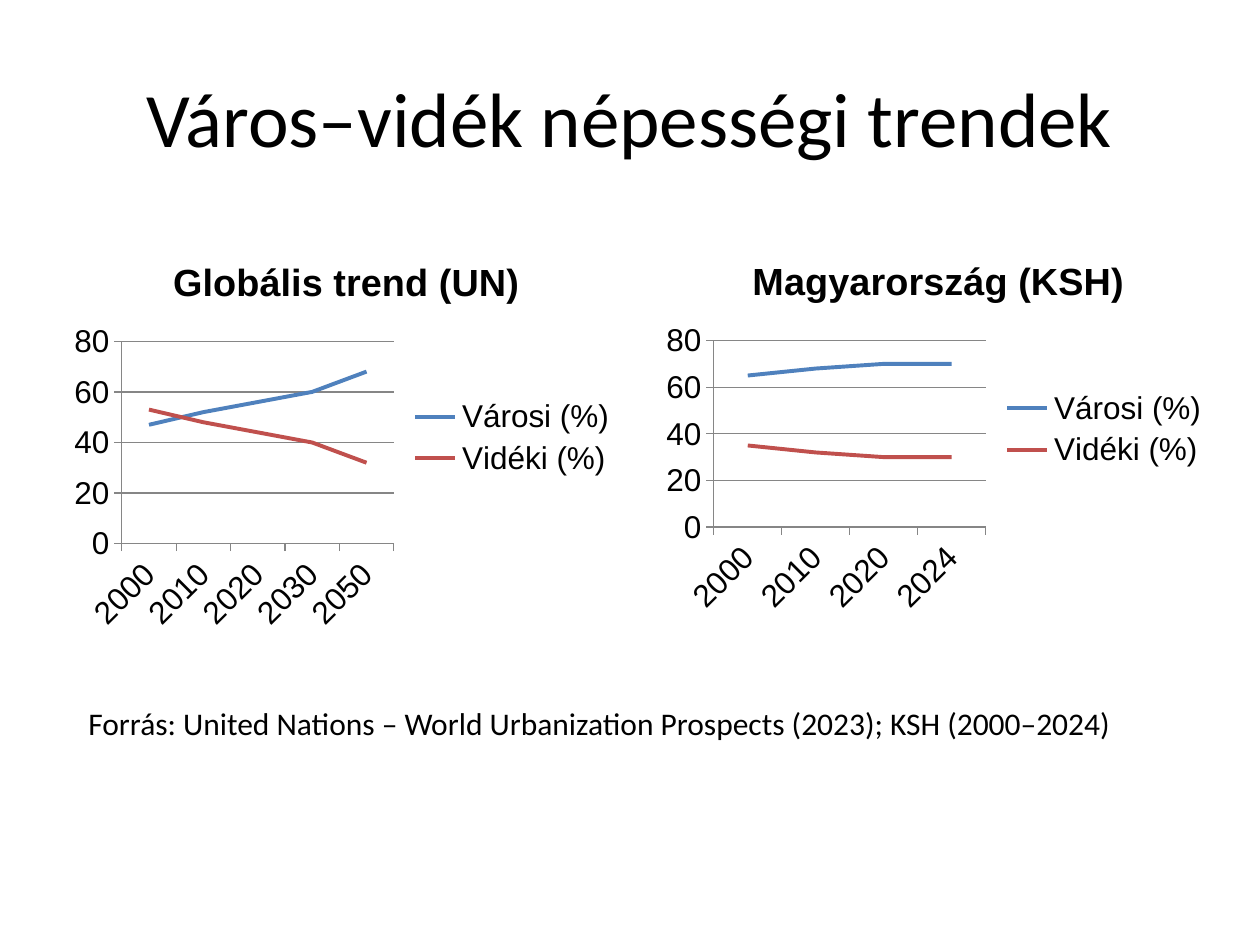
from pptx import Presentation
from pptx import util as u
from pptx.chart.data import CategoryChartData
from pptx.dml.color import RGBColor
from pptx.enum import chart as ch, text

PX = 914400 / 126
COLORS = {
    "text": "000000",
    "grid": "868686",
    "Városi (%)": "4F81BD",
    "Vidéki (%)": "C0504D",
}
CHART_TOP, CHART_WIDTH = 236, 567
CHARTS = [
    {"title": "Globális trend (UN)", "left": 63, "height": 403,
     "years": ["2000", "2010", "2020", "2030", "2050"],
     "shares": [[47, 52, 56, 60, 68], [53, 48, 44, 40, 32]]},
    {"title": "Magyarország (KSH)", "left": 655, "height": 386,
     "years": ["2000", "2010", "2020", "2024"],
     "shares": [[65, 68, 70, 70], [35, 32, 30, 30]]},
]


def box(*lengths):
    return [u.Emu(round(length * PX)) for length in lengths]


def rgb(name):
    return RGBColor.from_string(COLORS[name])


def style_font(font, **values):
    for name, value in values.items():
        setattr(font, name, value)
    font.color.rgb = rgb("text")


def add_text(slide, area, wording, size, **frame_format):
    frame = slide.shapes.add_textbox(*box(*area)).text_frame
    frame.word_wrap = True
    for name, value in frame_format.items():
        setattr(frame, name, value)
    paragraph = frame.paragraphs[0]
    run = paragraph.add_run()
    run.text = wording
    style_font(run.font, name="Calibri", size=u.Pt(size))
    return paragraph


def style_line(line, color, width):
    line.color.rgb = rgb(color)
    line.width = u.Pt(width)


def add_trend(slide, title, left, height, years, shares):
    data = CategoryChartData()
    data.categories = years
    for name, values in zip(("Városi (%)", "Vidéki (%)"), shares):
        data.add_series(name, values)
    trend = slide.shapes.add_chart(
        ch.XL_CHART_TYPE.LINE, *box(left, CHART_TOP, CHART_WIDTH, height), data).chart
    style_font(trend.font, name="Arial", size=u.Pt(18))

    # Heading and legend
    trend.has_title = True
    trend.chart_title.include_in_layout = False
    heading = trend.chart_title.text_frame.paragraphs[0].add_run()
    heading.text = title
    style_font(heading.font, name="Arial", size=u.Pt(21.6), bold=True)
    trend.has_legend = True
    trend.legend.position = ch.XL_LEGEND_POSITION.RIGHT
    trend.legend.include_in_layout = False

    # Axes
    scale = trend.value_axis
    for name, value in {"minimum_scale": 0, "maximum_scale": 80, "major_unit": 20,
                        "has_major_gridlines": True}.items():
        setattr(scale, name, value)
    style_line(scale.major_gridlines.format.line, "grid", 0.75)
    for axis in (trend.category_axis, scale):
        axis.major_tick_mark = ch.XL_TICK_MARK.OUTSIDE
        style_line(axis.format.line, "grid", 0.75)

    # Lines
    trend.plots[0].vary_by_categories = False
    for series in trend.plots[0].series:
        series.smooth = False
        style_line(series.format.line, series.name, 2.25)


def main():
    deck = Presentation()
    deck.slide_width, deck.slide_height = box(1260, 945)
    slide = deck.slides.add_slide(deck.slide_layouts[6])

    # Title
    title = add_text(slide, (63, 38, 1134, 158), "Város–vidék népességi trendek", 44,
                     vertical_anchor=text.MSO_ANCHOR.MIDDLE)
    title.alignment = text.PP_ALIGN.CENTER

    # Trend charts
    for trend in CHARTS:
        add_trend(slide, **trend)

    # Source line
    add_text(slide, (76, 698, 1121, 50),
             "Forrás: United Nations – World Urbanization Prospects (2023); KSH (2000–2024)",
             18, auto_size=text.MSO_AUTO_SIZE.SHAPE_TO_FIT_TEXT)

    deck.save("out.pptx")


if __name__ == "__main__":
    main()
